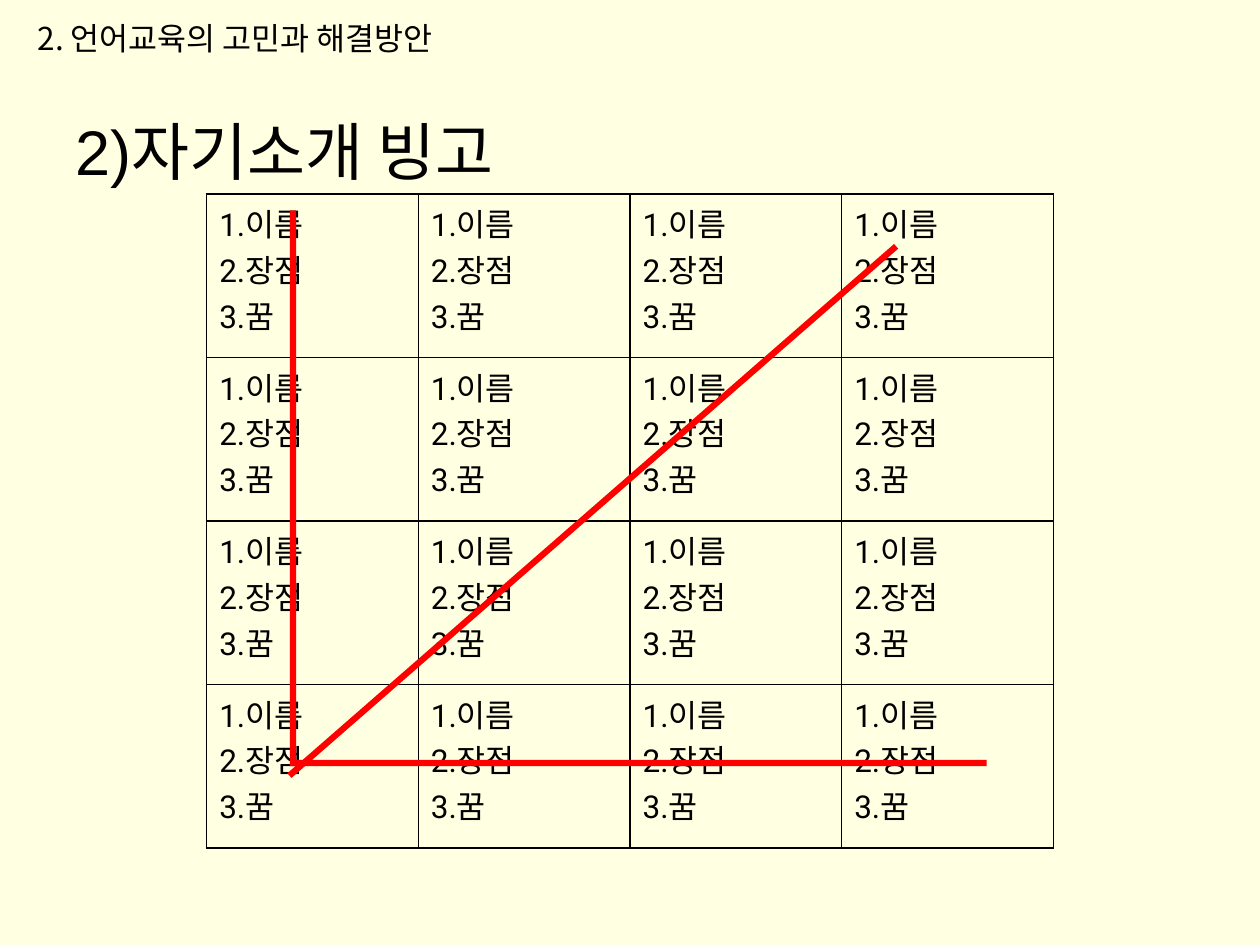
from dataclasses import dataclass

from lxml.etree import SubElement
from pptx import Presentation
from pptx.dml.color import RGBColor
from pptx.enum.shapes import MSO_SHAPE as Shape
from pptx.oxml.ns import qn
from pptx.util import Inches, Pt

BLACK, RED, CREAM = "000000", "FF0000", "FFFFE1"
KOREAN = "Noto Sans CJK KR"
GRID = 4
CELL_LINES = ("1.이름", "2.장점", "3.꿈")


@dataclass
class Label:
    text: str
    left: float
    top: float
    width: float
    height: float
    size: int
    font: str


@dataclass
class Strike:
    left: float
    top: float
    length: float
    rotation: float = 0


LABELS = (
    Label("2)자기소개 빙고", 0.5, 0.84, 9, 5.86, 36, "Arial"),
    Label("2. 언어교육의 고민과 해결방안", 0.2, 0.1, 4.17, 0.71, 18, KOREAN),
)
STRIKES = (
    Strike(2.32, 6.03, 5.51),
    Strike(1.51, 4.03, 6.39, 318.9),
    Strike(0.12, 3.85, 4.41, 270),
)


def paint(fill, color: str) -> None:
    fill.solid()
    fill.fore_color.rgb = RGBColor.from_string(color)


def write(tf, lines: tuple[str, ...], size: int, font: str) -> None:
    tf.text = "\n".join(lines)
    for p in tf.paragraphs:
        p.font.size = Pt(size)
        p.font.name = font
        paint(p.font.fill, BLACK)
        # Korean glyphs take their typeface from a:ea
        SubElement(p._p.pPr.find(qn("a:defRPr")), qn("a:ea"), typeface=KOREAN)


def add_label(s, label: Label) -> None:
    box = s.shapes.add_textbox(Inches(label.left), Inches(label.top),
                               Inches(label.width), Inches(label.height))
    box.text_frame.word_wrap = True
    write(box.text_frame, (label.text,), label.size, label.font)


def add_borders(cell) -> None:
    tc_pr = cell._tc.get_or_add_tcPr()
    for side in ("lnL", "lnR", "lnT", "lnB"):
        ln = SubElement(tc_pr, qn(f"a:{side}"), w=str(Pt(1)))
        SubElement(SubElement(ln, qn("a:solidFill")), qn("a:srgbClr"), val=BLACK)


def add_bingo(s) -> None:
    frame = s.shapes.add_table(GRID, GRID, Inches(1.64), Inches(1.54),
                               Inches(6.72), Inches(5.19))
    table = frame.table
    table.first_row = table.horz_banding = False
    for cell in table.iter_cells():
        add_borders(cell)
        cell.fill.background()
        write(cell.text_frame, CELL_LINES, 18, "Roboto")


def add_strike(s, strike: Strike) -> None:
    sp = s.shapes.add_shape(Shape.RECTANGLE, Inches(strike.left), Inches(strike.top),
                            Inches(strike.length), Inches(0.05))
    sp.rotation = strike.rotation
    sp.shadow.inherit = False
    paint(sp.fill, RED)
    sp.line.fill.background()


def main() -> None:
    prs = Presentation()
    prs.slide_width, prs.slide_height = Inches(10), Inches(7.5)
    s = prs.slides.add_slide(prs.slide_layouts[6])
    paint(s.background.fill, CREAM)

    # Headings
    for label in LABELS:
        add_label(s, label)

    # Bingo card and the winning lines
    add_bingo(s)
    for strike in STRIKES:
        add_strike(s, strike)

    prs.save("out.pptx")


if __name__ == "__main__":
    main()
